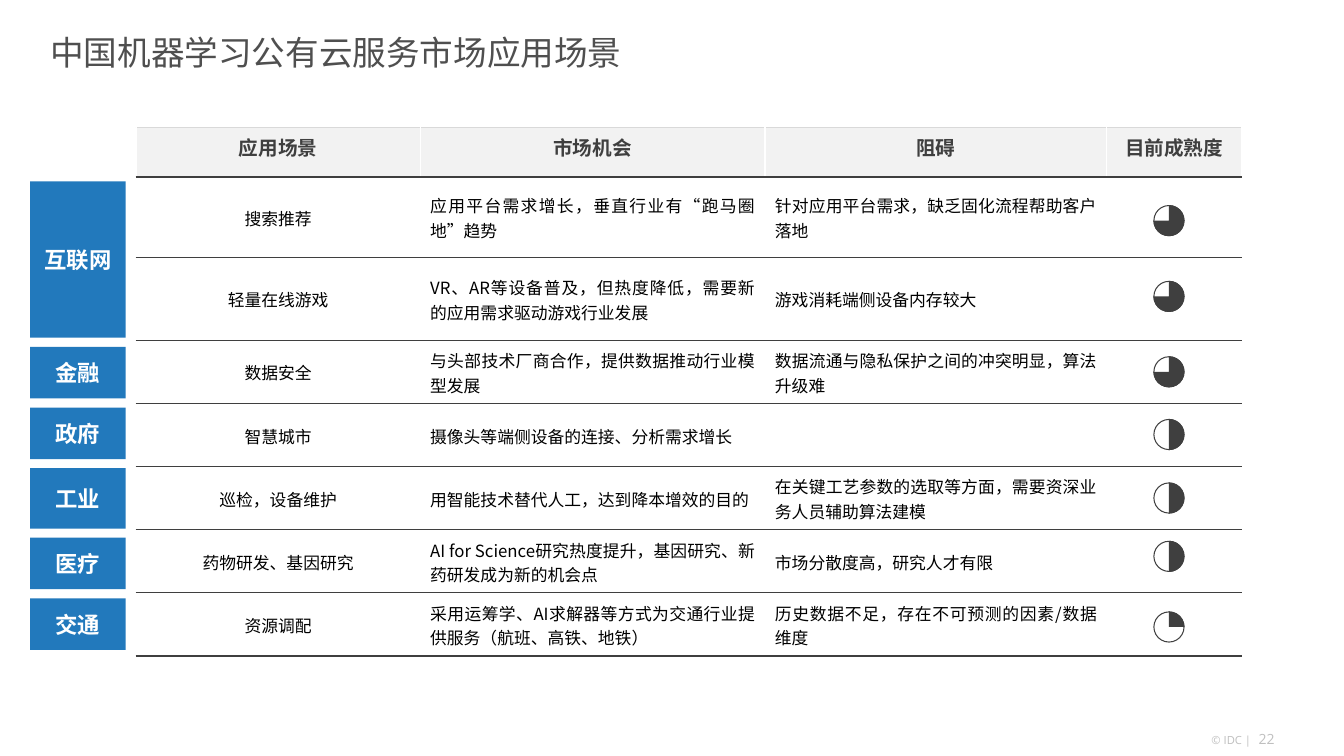
"""Build the slide on application scenarios of machine learning cloud services."""
from dataclasses import dataclass

from lxml.etree import SubElement
from pptx import Presentation
from pptx.dml.color import RGBColor
from pptx.enum.shapes import MSO_SHAPE as Shape
from pptx.enum.text import MSO_ANCHOR as Anchor, MSO_AUTO_SIZE as AutoSize, PP_ALIGN as Align
from pptx.oxml.ns import qn
from pptx.util import Cm, Pt


@dataclass(frozen=True)
class Theme:
    """Colours, fonts and type sizes."""
    main_font: str = "Noto Sans CJK SC"
    footer_font: str = "Open Sans"
    white: str = "FFFFFF"
    black: str = "000000"
    blue: str = "2279BC"
    dark: str = "3F3F3F"
    title: str = "4F4F4F"
    header: str = "F2F2F2"
    header_rule: str = "D9D9D9"
    footer: str = "BFBFBF"
    title_size: float = 24
    sector_size: float = 16
    header_size: float = 14
    body_size: float = 12
    page_size: float = 10
    footer_size: float = 8


HEADERS = ["应用场景", "市场机会", "阻碍", "目前成熟度"]
SCENARIOS = [
    ["搜索推荐", "应用平台需求增长，垂直行业有“跑马圈地”趋势",
     "针对应用平台需求，缺乏固化流程帮助客户落地"],
    ["轻量在线游戏", "VR、AR等设备普及，但热度降低，需要新的应用需求驱动游戏行业发展",
     "游戏消耗端侧设备内存较大"],
    ["数据安全", "与头部技术厂商合作，提供数据推动行业模型发展",
     "数据流通与隐私保护之间的冲突明显，算法升级难"],
    ["智慧城市", "摄像头等端侧设备的连接、分析需求增长", ""],
    ["巡检，设备维护", "用智能技术替代人工，达到降本增效的目的",
     "在关键工艺参数的选取等方面，需要资深业务人员辅助算法建模"],
    ["药物研发、基因研究", "AI for Science研究热度提升，基因研究、新药研发成为新的机会点",
     "市场分散度高，研究人才有限"],
    ["资源调配", "采用运筹学、AI求解器等方式为交通行业提供服务（航班、高铁、地铁）",
     "历史数据不足，存在不可预测的因素/数据维度"],
]
COLUMN_WIDTHS = [7.16, 8.69, 8.61, 3.4]
ROW_HEIGHTS = [1.25, 2.03, 2.09] + [1.59] * 5
SECTORS = [("互联网", 3.94), ("金融", 1.3), ("政府", 1.3),
           ("工业", 1.52), ("医疗", 1.3), ("交通", 1.3)]
SECTOR_TOP, SECTOR_GAP = 4.57, 0.23
MATURITY = [(5.18, 3), (7.09, 3), (8.99, 3), (10.57, 2),
            (12.17, 2), (13.64, 2), (15.42, 1)]


def write_text(frame, text, *, size, color, font, bold=False, align=Align.LEFT,
               anchor=Anchor.TOP, margins=None):
    """Write one formatted paragraph into a text frame or table cell."""
    frame.word_wrap = True
    frame.vertical_anchor = anchor
    if margins:
        (frame.margin_left, frame.margin_top,
         frame.margin_right, frame.margin_bottom) = [Cm(value) for value in margins]
    para = getattr(frame, "text_frame", frame).paragraphs[0]
    para.alignment = align
    span = para.add_run()
    span.text = text
    span.font.name, span.font.size, span.font.bold = font, Pt(size), bold
    span.font.color.rgb = RGBColor.from_string(color)
    properties = span.font._element
    properties.set("lang", "zh-CN")
    SubElement(properties, qn("a:ea"), typeface=font)


def set_borders(cell, **sides):
    """Draw the named cell sides (L, R, T, B), each a colour and a width."""
    properties = cell._tc.get_or_add_tcPr()
    for position, (side, (color, width)) in enumerate(sides.items()):
        line = SubElement(properties, qn(f"a:ln{side}"), w=str(Pt(width)))
        fill = SubElement(line, qn("a:solidFill"))
        SubElement(fill, qn("a:srgbClr"), val=color)
        properties.insert(position, line)


class SlideBuilder:
    """Hold the theme and the current slide, and add elements to it."""

    def __init__(self, page, theme):
        """Keep the slide and its style."""
        self.page = page
        self.theme = theme

    def title(self, text):
        """Place and fill the title placeholder."""
        box = self.page.shapes.title
        box.left, box.top, box.width, box.height = Cm(1.27), Cm(0), Cm(30.05), Cm(2.62)
        box.text_frame.auto_size = AutoSize.NONE
        write_text(box.text_frame, text, size=self.theme.title_size, color=self.theme.title,
                   font=self.theme.main_font, anchor=Anchor.MIDDLE, margins=(0, 0, 0, 0))

    def footer(self, text, left, top, width, height, size):
        """Add a small grey text at the foot of the slide."""
        box = self.page.shapes.add_textbox(Cm(left), Cm(top), Cm(width), Cm(height))
        write_text(box.text_frame, text, size=size, color=self.theme.footer,
                   font=self.theme.footer_font, margins=(0, 0, 0, 0))

    def shape(self, kind, left, top, width, height, fill, line=None):
        """Add a filled preset shape, outlined if a line colour is given."""
        shape = self.page.shapes.add_shape(kind, Cm(left), Cm(top), Cm(width), Cm(height))
        shape.shadow.inherit = False
        shape.fill.solid()
        shape.fill.fore_color.rgb = RGBColor.from_string(fill)
        if line:
            shape.line.color.rgb = RGBColor.from_string(line)
            shape.line.width = Pt(0.75)
        else:
            shape.line.fill.background()
        return shape

    def sector(self, name, top, height):
        """Add the blue label of an industry."""
        box = self.shape(Shape.RECTANGLE, 0.76, top, 2.41, height, self.theme.blue)
        write_text(box.text_frame, name, size=self.theme.sector_size, color=self.theme.white,
                   font=self.theme.main_font, bold=True, align=Align.CENTER,
                   anchor=Anchor.MIDDLE)

    def maturity(self, top, quarters):
        """Add a circle with the given number of dark quarters."""
        area = (29.08, top, 0.76, 0.76)
        self.shape(Shape.OVAL, *area, self.theme.white, self.theme.dark)
        sector = self.shape(Shape.ARC, *area, self.theme.dark, self.theme.dark)
        sector.adjustments[0] = 162
        sector.adjustments[1] = 54 * (quarters - 1)

    def table(self, headers, rows):
        """Add the table of scenarios under its header row."""
        theme = self.theme
        table = self.page.shapes.add_table(
            len(rows) + 1, len(headers), Cm(3.43), Cm(3.21),
            Cm(sum(COLUMN_WIDTHS)), Cm(sum(ROW_HEIGHTS))).table
        table.first_row = table.horz_banding = False
        for column, width in zip(table.columns, COLUMN_WIDTHS):
            column.width = Cm(width)
        for row, height in zip(table.rows, ROW_HEIGHTS):
            row.height = Cm(height)
        for number, texts in enumerate([headers] + [row + [""] for row in rows]):
            is_header = number == 0
            for column, text in enumerate(texts):
                cell = table.cell(number, column)
                cell.fill.solid()
                cell.fill.fore_color.rgb = RGBColor.from_string(
                    theme.header if is_header else theme.white)
                set_borders(cell, L=(theme.white, 1), R=(theme.white, 1),
                            T=(theme.header_rule if is_header else theme.dark, 1),
                            B=(theme.dark, 1.5 if number == len(rows) else 1))
                if is_header:
                    write_text(cell, text, size=theme.header_size, color=theme.dark,
                               font=theme.main_font, bold=True, align=Align.CENTER)
                elif text:
                    write_text(cell, text, size=theme.body_size, color=theme.black,
                               font=theme.main_font, anchor=Anchor.MIDDLE,
                               align=Align.JUSTIFY if column else Align.CENTER,
                               margins=(0.25, 0.03, 0.25, 0))


def main():
    """Build and save the deck."""
    deck = Presentation()
    deck.slide_width, deck.slide_height = Cm(33.87), Cm(19.05)
    theme = Theme()
    builder = SlideBuilder(deck.slides.add_slide(deck.slide_layouts[5]), theme)
    builder.footer("22", 31.72, 18.42, 1.04, 0.43, theme.page_size)
    builder.footer("© IDC |", 30.53, 18.47, 1.42, 0.33, theme.footer_size)
    builder.table(HEADERS, SCENARIOS)
    builder.title("中国机器学习公有云服务市场应用场景")
    top = SECTOR_TOP
    for name, height in SECTORS:
        builder.sector(name, top, height)
        top += height + SECTOR_GAP
    for circle_top, quarters in MATURITY:
        builder.maturity(circle_top, quarters)
    deck.save("out.pptx")


if __name__ == "__main__":
    main()
